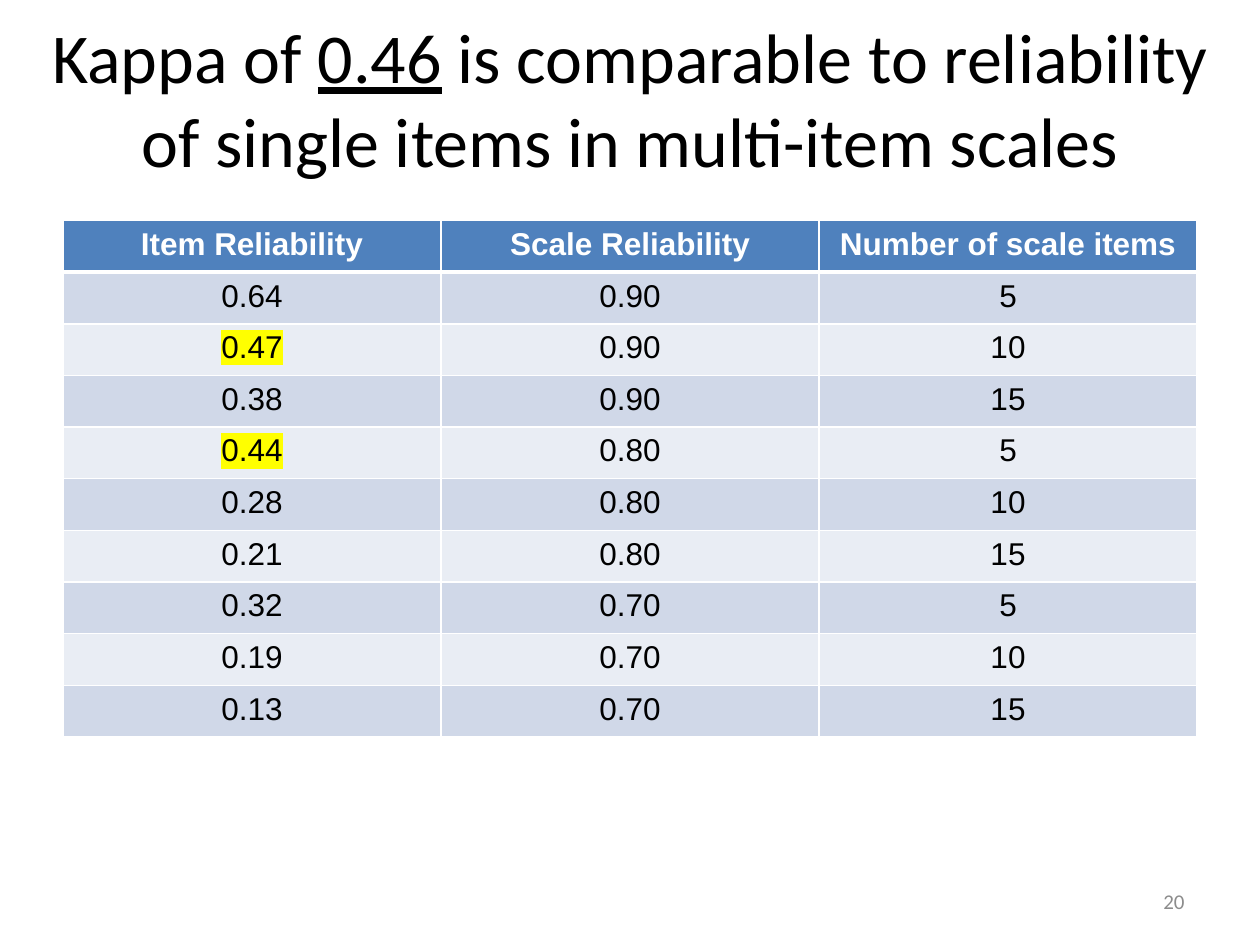
from lxml.etree import SubElement
from pptx import Presentation
from pptx.dml.color import RGBColor
from pptx.enum.text import MSO_ANCHOR, PP_ALIGN
from pptx.oxml import parse_xml
from pptx.oxml.ns import nsdecls, qn
from pptx.util import Inches, Pt

COLORS = {
    "text": "000000",
    "white": "FFFFFF",
    "header": "4F81BD",
    "odd_row": "D0D8E8",
    "even_row": "E9EDF4",
    "highlight": "FFFF00",
    "page_number": "8C8C8C",
}
TITLE = [("Kappa of ", False), ("0.46", True),
         (" is comparable to reliability of single items in multi-item scales", False)]
HEADERS = ["Item Reliability", "Scale Reliability", "Number of scale items"]
SCALE_ITEMS = ["5", "10", "15"]
ITEM_RELIABILITY = {
    "0.90": ["0.64", "0.47", "0.38"],
    "0.80": ["0.44", "0.28", "0.21"],
    "0.70": ["0.32", "0.19", "0.13"],
}
COMPARABLE = {"0.47", "0.44"}
COLUMN_WIDTH, ROW_HEIGHT = 3, 0.41


def add_span(para, text, size, font, color, bold=False, underline=False):
    span = para.add_run()
    span.text = text
    span.font.size = Pt(size)
    span.font.name = font
    span.font.bold = bold
    span.font.underline = underline
    span.font.color.rgb = RGBColor.from_string(COLORS[color])
    return span


def highlight(span):
    fill = span.font.fill._xPr.find(qn("a:solidFill"))
    fill.addnext(parse_xml(
        f'<a:highlight {nsdecls("a")}><a:srgbClr val="{COLORS["highlight"]}"/></a:highlight>'))


def set_borders(cell, bottom):
    properties = cell._tc.get_or_add_tcPr()
    for side, points in (("L", 1), ("R", 1), ("T", 1), ("B", bottom)):
        line = SubElement(properties, qn(f"a:ln{side}"), w=str(Pt(points)))
        fill = SubElement(line, qn("a:solidFill"))
        SubElement(fill, qn("a:srgbClr"), val=COLORS["white"])


def add_title(page):
    title = page.shapes.title
    title.left, title.top = Inches(0.29), Inches(0.15)
    title.width, title.height = Inches(9.42), Inches(1.25)
    title.text_frame.vertical_anchor = MSO_ANCHOR.MIDDLE
    para = title.text_frame.paragraphs[0]
    para.alignment = PP_ALIGN.CENTER
    for text, underline in TITLE:
        add_span(para, text, 40, "Calibri", "text", underline=underline)


def fill_cell(cell, text, fill, is_header):
    set_borders(cell, bottom=3 if is_header else 1)
    cell.fill.solid()
    cell.fill.fore_color.rgb = RGBColor.from_string(COLORS[fill])
    para = cell.text_frame.paragraphs[0]
    para.alignment = PP_ALIGN.CENTER
    span = add_span(para, text, 18, "Arial", "white" if is_header else "text", bold=is_header)
    if text in COMPARABLE:
        highlight(span)


def add_reliability_table(page):
    rows = [HEADERS] + [
        [item, scale, count]
        for scale, items in ITEM_RELIABILITY.items()
        for item, count in zip(items, SCALE_ITEMS)
    ]
    table = page.shapes.add_table(
        len(rows), len(HEADERS), Inches(0.5), Inches(1.75),
        Inches(COLUMN_WIDTH * len(HEADERS)), Inches(ROW_HEIGHT * len(rows))).table
    for row_index, row in enumerate(rows):
        is_header = row_index == 0
        fill = "header" if is_header else "odd_row" if row_index % 2 else "even_row"
        for column_index, text in enumerate(row):
            fill_cell(table.cell(row_index, column_index), text, fill, is_header)


def add_page_number(page):
    box = page.shapes.add_textbox(Inches(7.17), Inches(6.95), Inches(2.33), Inches(0.4))
    box.text_frame.word_wrap = True
    box.text_frame.vertical_anchor = MSO_ANCHOR.MIDDLE
    para = box.text_frame.paragraphs[0]
    para.alignment = PP_ALIGN.RIGHT
    add_span(para, "20", 12, "Calibri", "page_number")


def main():
    deck = Presentation()
    deck.slide_width, deck.slide_height = Inches(10), Inches(7.5)
    page = deck.slides.add_slide(deck.slide_layouts[5])
    add_title(page)
    add_reliability_table(page)
    add_page_number(page)
    deck.save("out.pptx")


if __name__ == "__main__":
    main()
